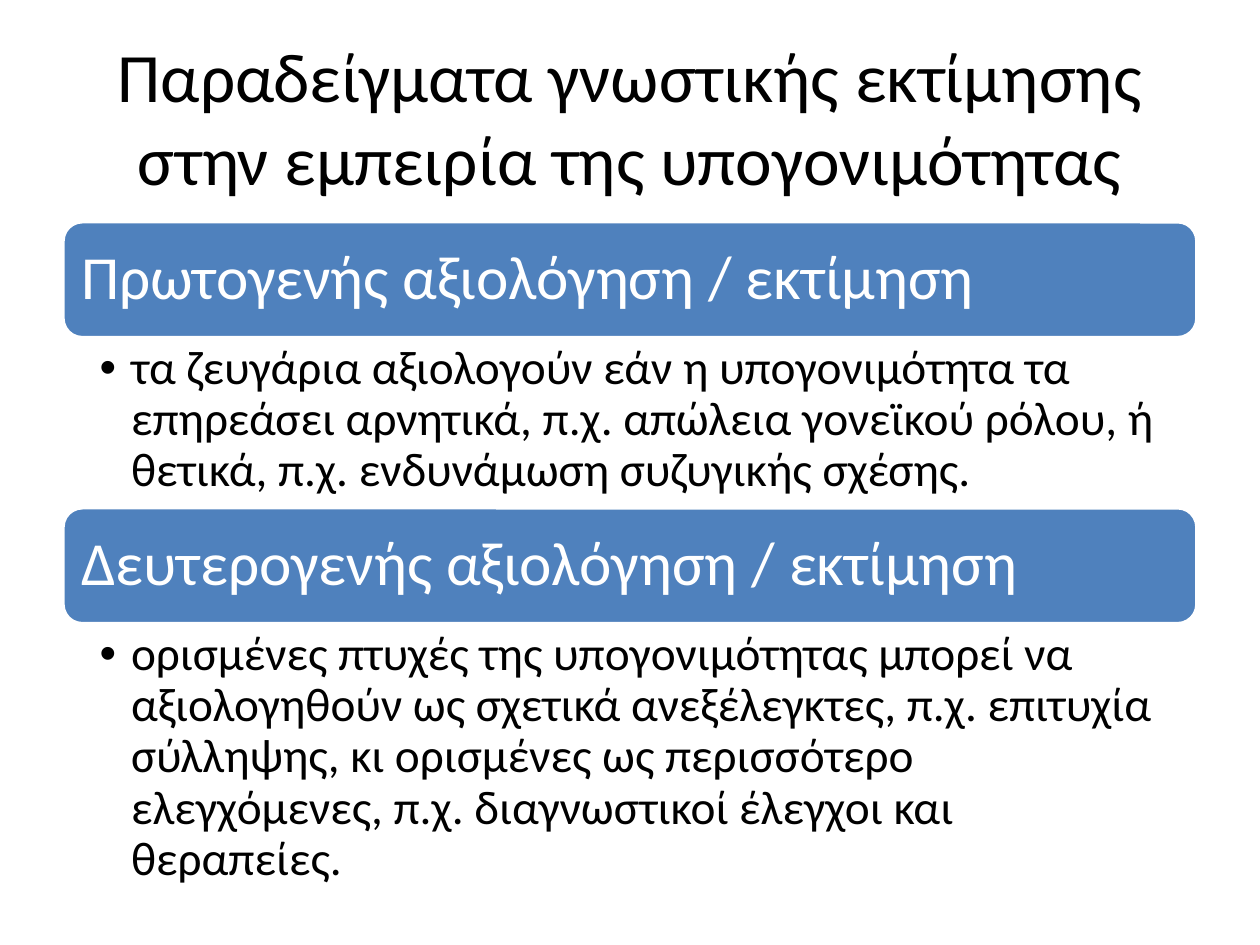
from lxml import etree
from pptx import Presentation, util as u
from pptx.dml.color import RGBColor
from pptx.enum import shapes, text
from pptx.oxml.ns import qn

COLORS = {"ink": "000000", "band": "4F81BD", "paper": "FFFFFF"}
MARGIN, WIDTH = 0.05, 0.9  # shares of the slide's width
TOP, BAND = 1.76 / 7.5, 0.92 / 7.5  # shares of the slide's height

SECTIONS = [
    ("Πρωτογενής αξιολόγηση / εκτίμηση",
     "τα ζευγάρια αξιολογούν εάν η υπογονιμότητα τα επηρεάσει αρνητικά, "
     "π.χ. απώλεια γονεϊκού ρόλου, ή θετικά, π.χ. ενδυνάμωση συζυγικής σχέσης.",
     1.35 / 7.5),
    ("Δευτερογενής αξιολόγηση / εκτίμηση",
     "ορισμένες πτυχές της υπογονιμότητας μπορεί να αξιολογηθούν ως σχετικά "
     "ανεξέλεγκτες, π.χ. επιτυχία σύλληψης, κι ορισμένες ως περισσότερο "
     "ελεγχόμενες, π.χ. διαγνωστικοί έλεγχοι και θεραπείες.",
     2.18 / 7.5),
]


class Deck:
    font = "Calibri"

    def __init__(self):
        self.prs = Presentation()
        self.prs.slide_width, self.prs.slide_height = u.Inches(10), u.Inches(7.5)
        self.s = self.prs.slides.add_slide(self.prs.slide_layouts[5])

    def box(self, y, h):
        """Turn vertical shares into left, top, width and height."""
        w, tall = self.prs.slide_width, self.prs.slide_height
        return int(MARGIN * w), int(y * tall), int(WIDTH * w), int(h * tall)

    def set_text(self, sp, words, size, color, align, anchor, insets, spacing=None):
        tf = sp.text_frame
        tf.word_wrap, tf.auto_size = True, text.MSO_AUTO_SIZE.NONE
        tf.vertical_anchor = anchor
        tf.margin_left, tf.margin_top, tf.margin_right, tf.margin_bottom = map(u.Inches, insets)
        p = tf.paragraphs[0]
        p.alignment, p.line_spacing = align, spacing
        r = p.add_run()
        r.text = words
        r.font.name, r.font.size = self.font, u.Pt(size)
        r.font.color.rgb = RGBColor.from_string(COLORS[color])
        return p

    def title(self, words, y, h):
        sp = self.s.shapes.title
        sp.left, sp.top, sp.width, sp.height = self.box(y, h)
        self.set_text(sp, words, 39.6, "ink", text.PP_ALIGN.CENTER,
                      text.MSO_ANCHOR.MIDDLE, (0.1, 0.05, 0.1, 0.05))

    def band(self, words, y, h):
        sp = self.s.shapes.add_shape(shapes.MSO_SHAPE.ROUNDED_RECTANGLE, *self.box(y, h))
        sp.shadow.inherit = False
        sp.fill.solid()
        sp.fill.fore_color.rgb = RGBColor.from_string(COLORS["band"])
        sp.line.color.rgb = RGBColor.from_string(COLORS["paper"])
        sp.line.width = u.Pt(2)
        self.set_text(sp, words, 35, "paper", text.PP_ALIGN.LEFT,
                      text.MSO_ANCHOR.MIDDLE, (0.1,) * 4, 0.9)

    def bullet(self, words, y, h):
        sp = self.s.shapes.add_textbox(*self.box(y, h))
        p = self.set_text(sp, words, 27, "ink", text.PP_ALIGN.LEFT,
                          text.MSO_ANCHOR.TOP, (0.29, 0.05, 0.27, 0.05), 0.9)
        pPr = p._p.get_or_add_pPr()
        pPr.set("marL", str(u.Inches(0.25)))
        pPr.set("indent", str(-u.Inches(0.25)))
        etree.SubElement(pPr, qn("a:buFont"), typeface="Arial")
        etree.SubElement(pPr, qn("a:buChar"), char="•")


def main():
    deck = Deck()
    deck.title("Παραδείγματα γνωστικής εκτίμησης στην εμπειρία της υπογονιμότητας",
               0.04, 1.25 / 7.5)
    y = TOP
    for heading, detail, h in SECTIONS:
        deck.band(heading, y, BAND)
        deck.bullet(detail, y + BAND, h)
        y += BAND + h
    deck.prs.save("out.pptx")


if __name__ == "__main__":
    main()
